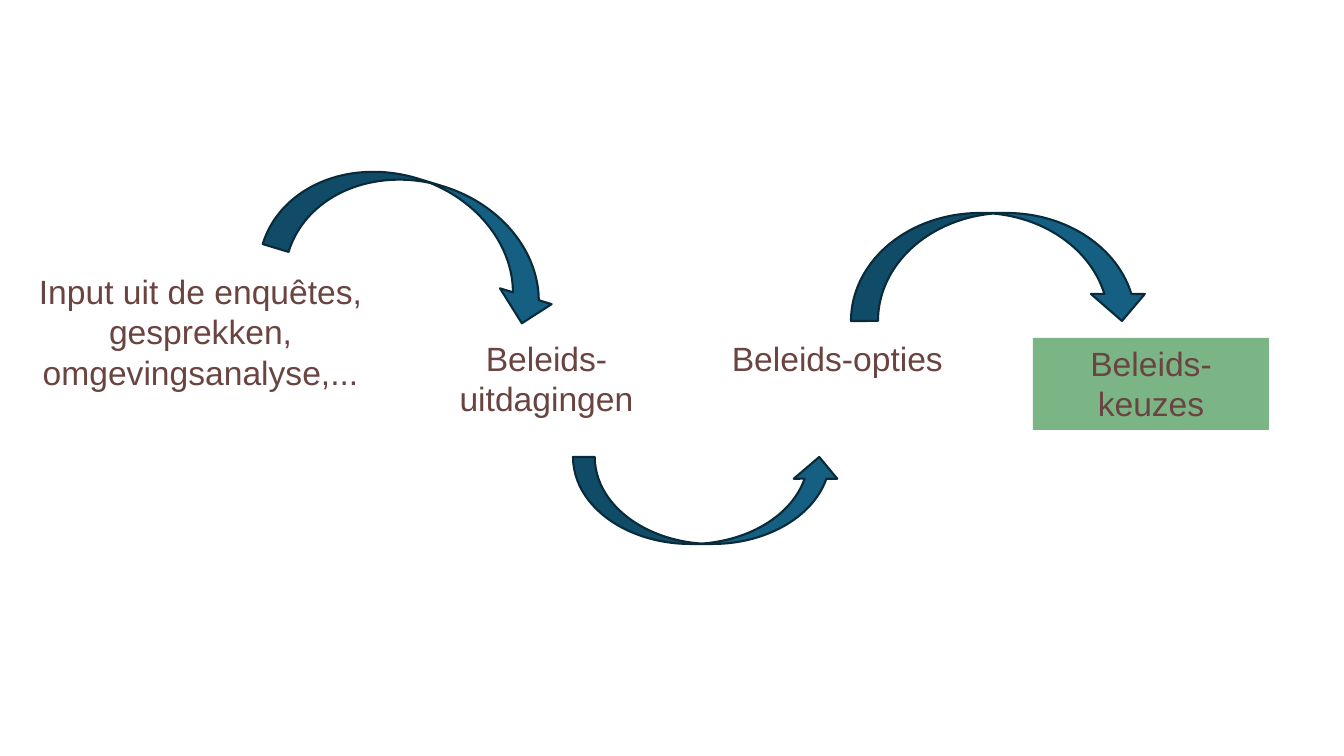
from pptx import Presentation
from pptx.dml.color import RGBColor
from pptx.enum.shapes import MSO_SHAPE
from pptx.enum.text import MSO_ANCHOR, MSO_AUTO_SIZE, PP_ALIGN
from pptx.util import Emu, Pt

RECT = MSO_SHAPE.RECTANGLE
ARC_DOWN = MSO_SHAPE.CURVED_DOWN_ARROW
ARC_UP = MSO_SHAPE.CURVED_UP_ARROW
TOP = MSO_ANCHOR.TOP
GROW = MSO_AUTO_SIZE.SHAPE_TO_FIT_TEXT
CENTER = PP_ALIGN.CENTER

SLIDE_W, SLIDE_H = 1344, 756
SCALE = 12192000 / SLIDE_W  # EMU per px

THEME = {
    "font": {"name": "Arial", "size": Pt(24)},
    "text": RGBColor.from_string("6A4441"),
    "highlight": RGBColor.from_string("7BB586"),
    "arrow": RGBColor.from_string("156082"),
    "arrow_edge": RGBColor.from_string("092A39"),
    "edge_width": Pt(1.5),
}
FRAME_FORMAT = {"word_wrap": True, "auto_size": GROW, "vertical_anchor": TOP}


def px(*lengths):
    return [Emu(round(length * SCALE)) for length in lengths]


prs = Presentation()
prs.slide_width, prs.slide_height = px(SLIDE_W, SLIDE_H)
slide = prs.slides.add_slide(prs.slide_layouts[6])

# Policy stages: wording, box, highlighted
stages = [
    ("Input uit de enquêtes, gesprekken, omgevingsanalyse,...", (25, 266, 351, 222), False),
    ("Beleids-uitdagingen", (392, 333, 309, 92), False),
    ("Beleids-opties ", (716, 333, 252, 92), False),
    ("Beleids-keuzes", (1033, 338, 236, 92), True),
]
for wording, box, highlighted in stages:
    if highlighted:
        stage = slide.shapes.add_shape(RECT, *px(*box))
        stage.shadow.inherit = False
        stage.fill.solid()
        stage.fill.fore_color.rgb = THEME["highlight"]
        stage.line.fill.background()
    else:
        stage = slide.shapes.add_textbox(*px(*box))
    frame = stage.text_frame
    for attribute, value in FRAME_FORMAT.items():
        setattr(frame, attribute, value)
    paragraph = frame.paragraphs[0]
    paragraph.alignment = CENTER
    run = paragraph.add_run()
    run.text = wording
    for attribute, value in THEME["font"].items():
        setattr(run.font, attribute, value)
    run.font.color.rgb = THEME["text"]

# Curved arrows from each stage to the next: preset, box, rotation
steps = [
    (ARC_DOWN, (272, 182, 298, 108), 17),
    (ARC_UP, (573, 457, 268, 87), 0),
    (ARC_DOWN, (851, 213, 298, 108), 0),
]
for preset, box, rotation in steps:
    step = slide.shapes.add_shape(preset, *px(*box))
    step.rotation = rotation
    step.shadow.inherit = False
    step.fill.solid()
    step.fill.fore_color.rgb = THEME["arrow"]
    step.line.color.rgb = THEME["arrow_edge"]
    step.line.width = THEME["edge_width"]

prs.save("out.pptx")
